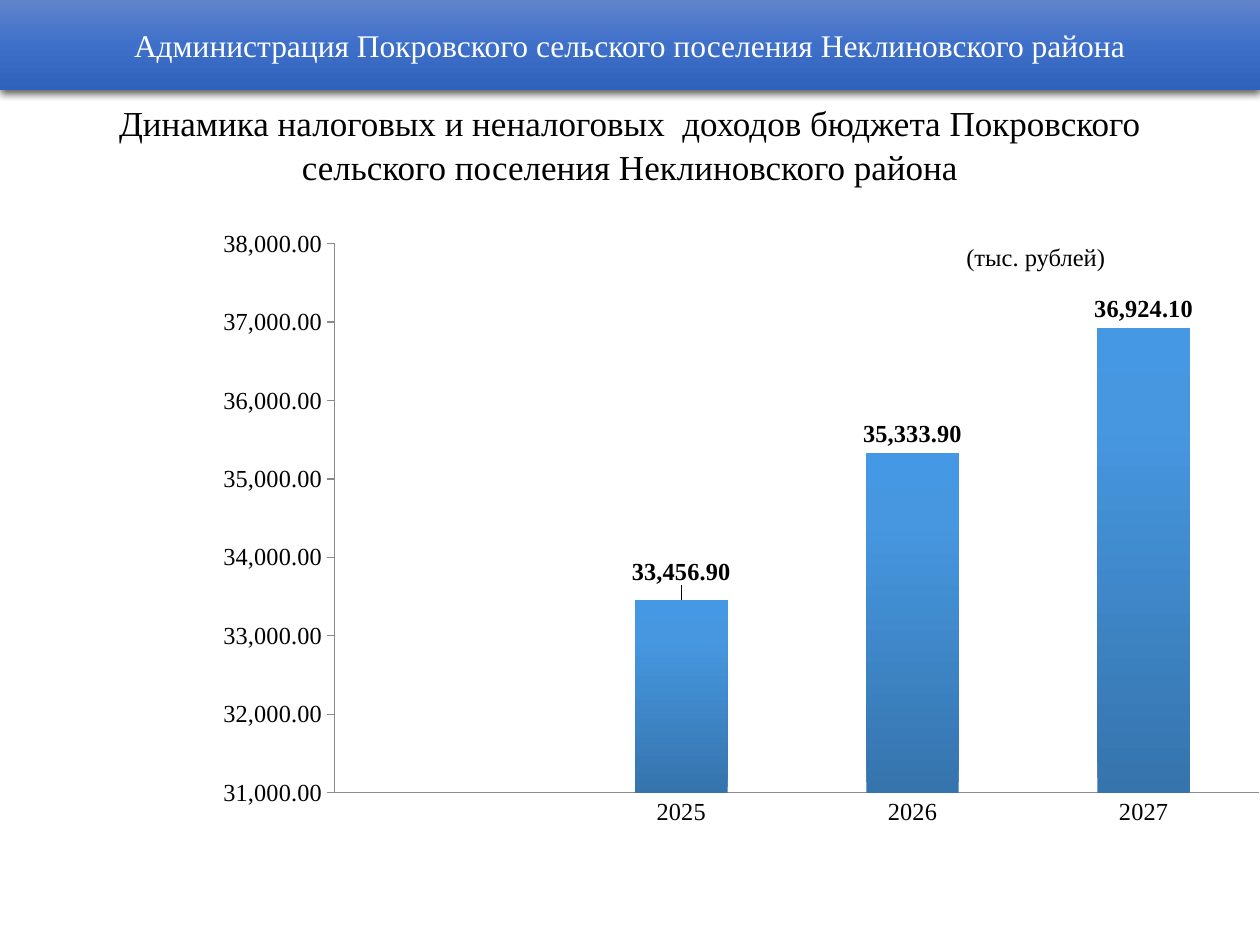
from copy import deepcopy

from lxml import etree
from pptx import Presentation
from pptx.chart.data import CategoryChartData
from pptx.dml.color import RGBColor
from pptx.enum.chart import XL_CHART_TYPE, XL_LABEL_POSITION, XL_TICK_MARK
from pptx.enum.shapes import MSO_SHAPE
from pptx.enum.text import MSO_ANCHOR, PP_ALIGN
from pptx.oxml import parse_xml
from pptx.oxml.ns import nsdecls, qn
from pptx.util import Cm, Pt

COLUMNS = XL_CHART_TYPE.COLUMN_CLUSTERED
OUTSIDE_END = XL_LABEL_POSITION.OUTSIDE_END
TICK_NONE, TICK_OUT = XL_TICK_MARK.NONE, XL_TICK_MARK.OUTSIDE
RECTANGLE = MSO_SHAPE.RECTANGLE
TOP, MIDDLE = MSO_ANCHOR.TOP, MSO_ANCHOR.MIDDLE
LEFT, CENTER = PP_ALIGN.LEFT, PP_ALIGN.CENTER

FONT = "Times New Roman"
BLACK, WHITE, AXIS_GRAY = "000000", "FFFFFF", "8B8B8B"
MONEY = "#,##0.00"
REVENUE = {"": None, "2025": 33456.9, "2026": 35333.9, "2027": 36924.1}
HEADER_STOPS = [(0, "6183CB"), (0.5, "3E70CA"), (1, "3062BB")]
COLUMN_STOPS = [(0, "3674AD"), (0.8, "4697E0"), (1, "4498E4")]


def color(value):
    """Turn a hex string into a colour."""
    return RGBColor.from_string(value)


def set_font(font, size, value=BLACK, bold=False):
    """Set face, size, colour and weight of a font."""
    font.name, font.size, font.bold = FONT, Pt(size), bold
    font.color.rgb = color(value)


def set_gradient(fill, owner, angle, stops):
    """Give the fill of the owner element a linear gradient with three stops."""
    fill.gradient()
    fill.gradient_angle = angle
    stop_list = owner.find(".//" + qn("a:gsLst"))
    stop_list.append(deepcopy(stop_list[0]))
    for stop, (position, value) in zip(fill.gradient_stops, stops):
        stop.position = position
        stop.color.rgb = color(value)


def write(shape, text, size, value=BLACK, align=CENTER, anchor=MIDDLE):
    """Write one wrapped paragraph into a shape and return it."""
    frame = shape.text_frame
    frame.word_wrap = True
    frame.vertical_anchor = anchor
    paragraph = frame.paragraphs[0]
    paragraph.text = text
    paragraph.alignment = align
    set_font(paragraph.font, size, value)
    return paragraph


def add_header(slide, left, top, width, height):
    """Add the gradient band with the name of the administration."""
    band = slide.shapes.add_shape(RECTANGLE, left, top, width, height)
    band.line.fill.background()
    set_gradient(band.fill, band._element.spPr, 270, HEADER_STOPS)
    band.shadow.inherit = False
    effects = band._element.spPr.find(qn("a:effectLst"))
    shadow = etree.SubElement(effects, qn("a:outerShdw"), blurRad=str(Pt(4.5)),
                              dist=str(Pt(1.5)), dir="5400000", rotWithShape="0")
    black = etree.SubElement(shadow, qn("a:srgbClr"), val=BLACK)
    etree.SubElement(black, qn("a:alpha"), val="63000")
    write(band, "Администрация Покровского сельского поселения Неклиновского района",
          18, WHITE)


def add_title(slide, left, top, width, height):
    """Add the two-line title."""
    title = slide.shapes.add_textbox(left, top, width, height)
    paragraph = write(title, "Динамика налоговых и неналоговых  доходов бюджета "
                      "Покровского сельского поселения Неклиновского района", 20)
    paragraph.line_spacing = Pt(25)


def style_axis(axis, tick):
    """Style the line, ticks and labels of an axis."""
    axis.has_major_gridlines = False
    axis.major_tick_mark, axis.minor_tick_mark = tick, TICK_NONE
    axis.format.line.color.rgb = color(AXIS_GRAY)
    axis.format.line.width = Pt(0.75)
    set_font(axis.tick_labels.font, 14)


def manual_layout(**settings):
    """Build a chart layout element from its settings in schema order."""
    parts = "".join(f'<c:{name} val="{value}"/>' for name, value in settings.items())
    return parse_xml(f'<c:layout {nsdecls("c")}><c:manualLayout>{parts}'
                     '</c:manualLayout></c:layout>')


def add_plot_layout(chart):
    """Fix the inner plot area inside the chart."""
    plot_area = chart._chartSpace.chart.plotArea
    for layout in plot_area.findall(qn("c:layout")):
        plot_area.remove(layout)
    plot_area.insert(0, manual_layout(
        layoutTarget="inner", xMode="edge", yMode="edge",
        x=0.101, y=0.071, w=0.899, h=0.827))


def add_labels(series):
    """Label the columns and lift the label of the first year."""
    labels = series.data_labels
    labels.show_value = True
    labels.number_format, labels.number_format_is_linked = MONEY, False
    labels.position = OUTSIDE_END
    set_font(labels.font, 14, bold=True)
    first_year = series.points[1].data_label
    set_font(first_year.font, 14, bold=True)
    first_year.position = OUTSIDE_END
    index = series._element.find(".//" + qn("c:dLbl")).find(qn("c:idx"))
    index.addnext(manual_layout(x=0, y=-0.014))


def add_revenue_chart(slide, left, top, width, height):
    """Add the revenue columns with the unit note over them."""
    data = CategoryChartData(number_format=MONEY)
    data.categories = list(REVENUE)
    data.add_series("Доходы", list(REVENUE.values()))
    chart = slide.shapes.add_chart(COLUMNS, left, top, width, height, data).chart
    chart.has_title = chart.has_legend = False
    set_font(chart.font, 14)

    plot = chart.plots[0]
    plot.gap_width, plot.vary_by_categories = 150, False
    revenue = plot.series[0]
    set_gradient(revenue.format.fill, revenue._element, 90, COLUMN_STOPS)
    add_labels(revenue)

    style_axis(chart.category_axis, TICK_NONE)
    amounts = chart.value_axis
    style_axis(amounts, TICK_OUT)
    amounts.minimum_scale, amounts.maximum_scale = 31000, 38000
    amounts.major_unit = 1000
    amounts.tick_labels.number_format = MONEY
    amounts.tick_labels.number_format_is_linked = False
    add_plot_layout(chart)

    unit = slide.shapes.add_shape(RECTANGLE, left + Cm(14.73), top + Cm(0.79),
                                  Cm(3.76), Cm(0.99))
    unit.fill.background()
    unit.line.color.rgb = color(WHITE)
    unit.line.width = Pt(0.75)
    unit.shadow.inherit = False
    write(unit, "(тыс. рублей)", 14, align=LEFT, anchor=TOP)


def main():
    """Build and save the slide."""
    deck = Presentation()
    deck.slide_width, deck.slide_height = Cm(25.4), Cm(19.05)
    slide = deck.slides.add_slide(deck.slide_layouts[6])
    add_title(slide, Cm(1.27), Cm(1.83), Cm(22.86), Cm(2.13))
    add_revenue_chart(slide, Cm(4.5), Cm(3.96), Cm(20.9), Cm(13.39))
    add_header(slide, 0, 0, deck.slide_width, Cm(1.82))
    deck.save("out.pptx")


if __name__ == "__main__":
    main()
